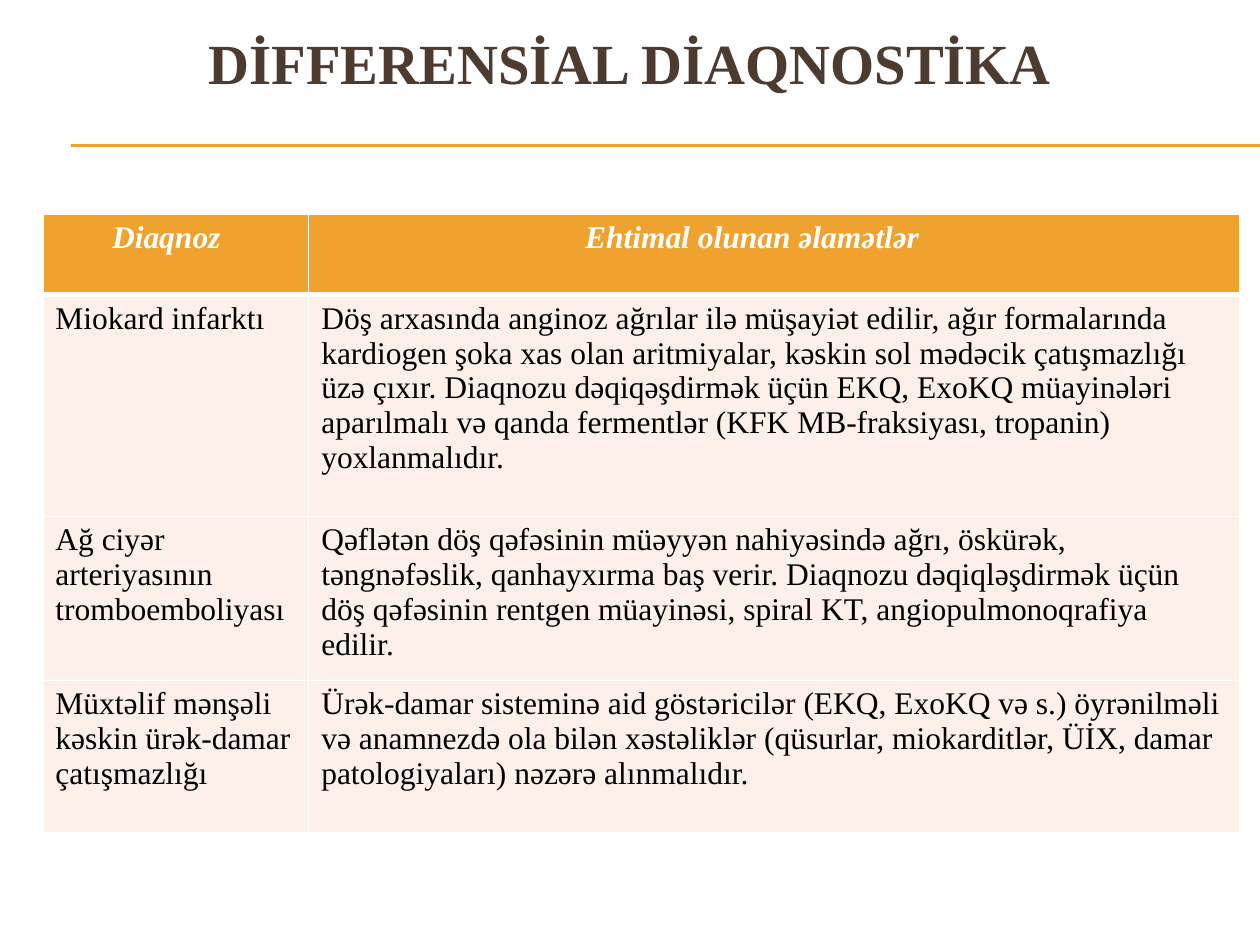
from lxml import etree
from pptx import Presentation
from pptx.dml.color import RGBColor as RGB
from pptx.enum.shapes import MSO_CONNECTOR as Conn
from pptx.enum.text import MSO_ANCHOR as Anchor, PP_ALIGN as Align
from pptx.oxml.ns import qn
from pptx.util import Inches, Pt

COLORS = {"title": "4E3B30", "accent": "F0A22E", "body": "FCF0E8",
          "white": "FFFFFF", "black": "000000"}
FONT = "Times New Roman"
ROWS = [
    ("Diaqnoz", "Ehtimal olunan əlamətlər"),
    ("Miokard infarktı",
     "Döş arxasında anginoz ağrılar ilə müşayiət edilir, ağır formalarında "
     "kardiogen şoka xas olan aritmiyalar, kəskin sol mədəcik çatışmazlığı "
     "üzə çıxır. Diaqnozu dəqiqəşdirmək üçün EKQ, ExoKQ müayinələri "
     "aparılmalı və qanda fermentlər (KFK MB-fraksiyası, tropanin) "
     "yoxlanmalıdır."),
    ("Ağ ciyər arteriyasının tromboemboliyası",
     "Qəflətən döş qəfəsinin müəyyən nahiyəsində ağrı, öskürək, "
     "təngnəfəslik, qanhayxırma baş verir. Diaqnozu dəqiqləşdirmək üçün "
     "döş qəfəsinin rentgen müayinəsi, spiral KT, angiopulmonoqrafiya "
     "edilir."),
    ("Müxtəlif mənşəli kəskin ürək-damar çatışmazlığı",
     "Ürək-damar sisteminə aid göstəricilər (EKQ, ExoKQ və s.) öyrənilməli "
     "və anamnezdə ola bilən xəstəliklər (qüsurlar, miokarditlər, ÜİX, damar "
     "patologiyaları) nəzərə alınmalıdır."),
]
COL_WIDTHS = [2.11, 7.39]
ROW_HEIGHTS = [0.64, 1.76, 1.21, 1.21]
HEADER_RIGHT = [0.25, 0.45]


def style_run(p, size, color, bold=False, italic=False):
    f = p.runs[0].font
    f.name, f.size, f.bold, f.italic = FONT, Pt(size), bold, italic
    f.color.rgb = RGB.from_string(COLORS[color])


def add_border(cell, side, width):
    ln = etree.SubElement(cell._tc.get_or_add_tcPr(), qn(f"a:ln{side}"),
                          w=str(Pt(width)))
    fill = etree.SubElement(ln, qn("a:solidFill"))
    etree.SubElement(fill, qn("a:srgbClr"), val=COLORS["white"])


prs = Presentation()
prs.slide_width, prs.slide_height = Inches(10), Inches(7.5)
W = prs.slide_width
s = prs.slides.add_slide(prs.slide_layouts[6])

for y in (1.15, 1.16):
    line = s.shapes.add_connector(Conn.STRAIGHT, Inches(0.56), Inches(y),
                                  W, Inches(y))
    line.line.color.rgb = RGB.from_string(COLORS["accent"])
    line.line.width = Pt(0.75)
    etree.SubElement(line._element.spPr, qn("a:effectLst"))

title = s.shapes.add_textbox(int(W * 0.05), Inches(0.17), int(W * 0.9), Inches(0.64))
tf = title.text_frame
tf.word_wrap = True
tf.vertical_anchor = Anchor.MIDDLE
tf.text = "DİFFERENSİAL DİAQNOSTİKA"
tf.paragraphs[0].alignment = Align.CENTER
style_run(tf.paragraphs[0], 32.4, "title", bold=True)

table = s.shapes.add_table(len(ROWS), len(COL_WIDTHS), Inches(0.34), Inches(1.7),
                           Inches(sum(COL_WIDTHS)), Inches(sum(ROW_HEIGHTS))).table
for c, width in enumerate(COL_WIDTHS):
    table.columns[c].width = Inches(width)
for r, height in enumerate(ROW_HEIGHTS):
    table.rows[r].height = Inches(height)
    header = r == 0
    for c, text in enumerate(ROWS[r]):
        cell = table.cell(r, c)
        cell.text = text
        cell.margin_left = Inches(0.1)
        cell.margin_right = Inches(HEADER_RIGHT[c] if header else 0.1)
        cell.margin_top = cell.margin_bottom = Inches(0.05)
        p = cell.text_frame.paragraphs[0]
        p.alignment = Align.CENTER if header else Align.LEFT
        style_run(p, 18, "white" if header else "black", header, header)
        for side in "LRTB":
            thick = (header and side == "B") or (r == 1 and side == "T")
            add_border(cell, side, 3 if thick else 1)
        cell.fill.solid()
        cell.fill.fore_color.rgb = RGB.from_string(
            COLORS["accent" if header else "body"])

prs.save("out.pptx")
